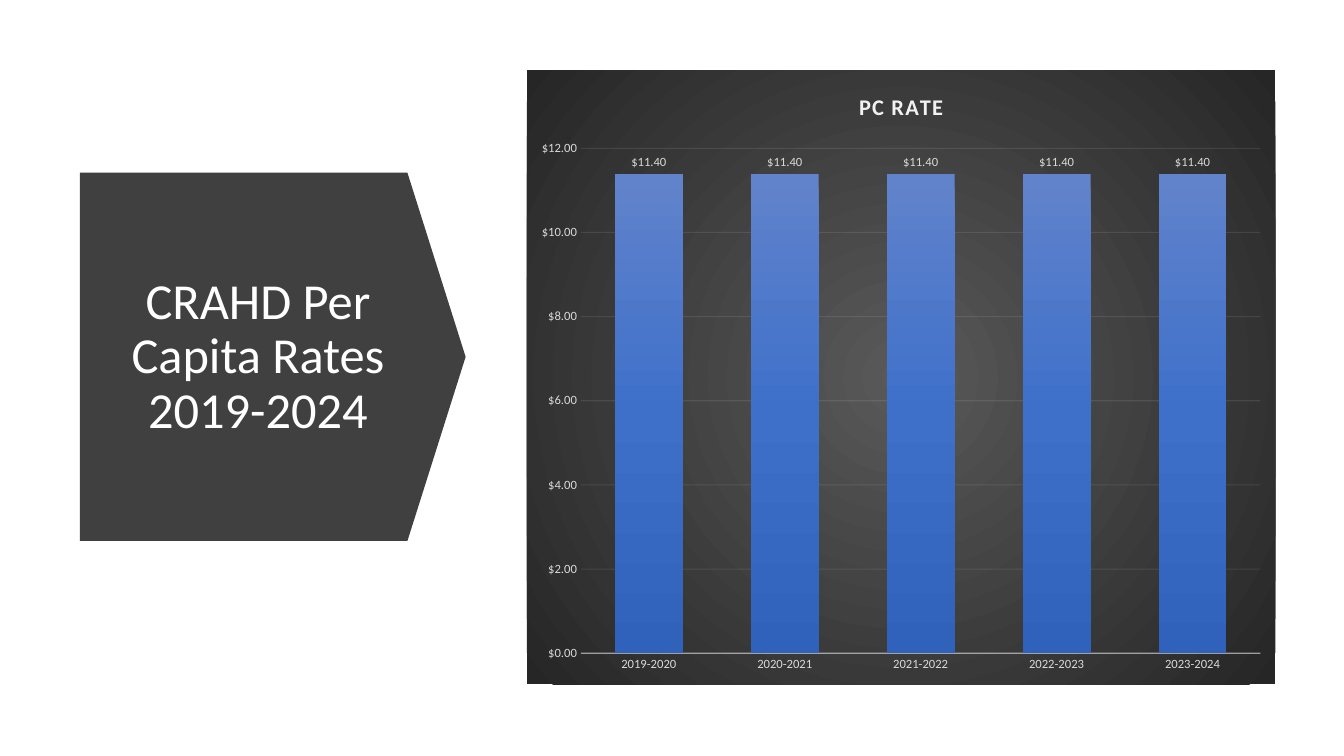
from lxml import etree
from pptx import Presentation, util as u
from pptx.chart.data import CategoryChartData
from pptx.dml.color import RGBColor
from pptx.enum import chart as ch, shapes, text
from pptx.oxml import parse_xml
from pptx.oxml.ns import nsdecls, qn

W, H = 13.33, 7.5
COLORS = {"white": "FFFFFF", "arrow": "404040", "label": "D9D9D9", "line": "F2F2F2",
          "glow": "595959", "edge": "262626",
          "bar_top": "6183CB", "bar_mid": "3E70CA", "bar_low": "3062BB"}
FONT = "Calibri"
MONEY = '"$"#,##0.00'
YEARS = [f"{y}-{y + 1}" for y in range(2019, 2024)]
RATES = [11.4] * len(YEARS)


def box(x, y, w, h):
    """Turn shares of the slide's size into lengths."""
    return u.Inches(x * W), u.Inches(y * H), u.Inches(w * W), u.Inches(h * H)


def style(font, size, color, bold=False):
    """Set the face, size, weight and colour of a font."""
    font.name, font.size, font.bold = FONT, u.Pt(size), bold
    font.color.rgb = RGBColor.from_string(COLORS[color])


def add_text(s, at, content, size=18, color="white", align=text.PP_ALIGN.CENTER,
             line_spacing=0.9, space_after=6):
    """Add a wrapped, vertically centred text box."""
    tf = s.shapes.add_textbox(*box(*at)).text_frame
    tf.word_wrap = True
    tf.vertical_anchor = text.MSO_ANCHOR.MIDDLE
    p = tf.paragraphs[0]
    p.alignment, p.line_spacing, p.space_after = align, line_spacing, u.Pt(space_after)
    r = p.add_run()
    r.text = content
    style(r.font, size, color)


def add_arrow(s, at):
    """Add the wide arrow that points right at the chart."""
    sp = s.shapes.add_shape(shapes.MSO_SHAPE.DOWN_ARROW, *box(*at))
    sp.rotation = 270
    sp.adjustments[0], sp.adjustments[1] = 1, 0.158
    sp.shadow.inherit = False
    sp.fill.solid()
    sp.fill.fore_color.rgb = RGBColor.from_string(COLORS["arrow"])
    sp.line.fill.background()


def gradient(stops, direction):
    """Build a gradient fill from (percent, colour) stops."""
    gs = "".join(f'<a:gs pos="{pos * 1000}"><a:srgbClr val="{COLORS[c]}"/></a:gs>'
                 for pos, c in stops)
    return parse_xml(f'<a:gradFill {nsdecls("a")} rotWithShape="1">'
                     f'<a:gsLst>{gs}</a:gsLst>{direction}</a:gradFill>')


def style_line(line, width, opacity):
    """Give a chart line its width and a translucent colour."""
    line.width = u.Pt(width)
    line.color.rgb = RGBColor.from_string(COLORS["line"])
    clr = line._get_or_add_ln().find(".//" + qn("a:srgbClr"))
    etree.SubElement(clr, qn("a:alpha")).set("val", str(opacity * 1000))


def style_axes(chart):
    """Format both axes and the gridlines."""
    cat, val = chart.category_axis, chart.value_axis
    for axis in (cat, val):
        axis.major_tick_mark = axis.minor_tick_mark = ch.XL_TICK_MARK.NONE
        style(axis.tick_labels.font, 9, "label")
    style_line(cat.format.line, 1, 54)
    val.minimum_scale, val.maximum_scale, val.major_unit = 0, 12, 2
    val.tick_labels.number_format = MONEY
    val.tick_labels.number_format_is_linked = False
    val.format.line.fill.background()
    val.has_major_gridlines = True
    style_line(val.major_gridlines.format.line, 0.75, 10)


def style_bars(plot):
    """Format the columns and their value labels."""
    plot.gap_width, plot.overlap, plot.vary_by_categories = 100, -24, False
    bars = plot.series[0]
    bars.format.fill.background()
    sp_pr = bars._element.spPr
    sp_pr.replace(sp_pr[0], gradient([(0, "bar_top"), (50, "bar_mid"), (100, "bar_low")],
                                     '<a:lin ang="5400000" scaled="0"/>'))
    labels = bars.data_labels
    labels.show_value = True
    labels.position = ch.XL_LABEL_POSITION.OUTSIDE_END
    labels.number_format, labels.number_format_is_linked = MONEY, False
    style(labels.font, 9, "label")


def add_rate_chart(s, at, title):
    """Add the column chart of rates on its dark radial background."""
    data = CategoryChartData(number_format=MONEY)
    data.categories = YEARS
    data.add_series(title, RATES)
    chart = s.shapes.add_chart(ch.XL_CHART_TYPE.COLUMN_CLUSTERED, *box(*at), data).chart
    chart.has_legend = False
    style(chart.font, 10, "label")
    chart.has_title = True
    chart.chart_title.include_in_layout = False
    r = chart.chart_title.text_frame.paragraphs[0].add_run()
    r.text = title
    style(r.font, 16, "line", bold=True)
    r._r.get_or_add_rPr().set("spc", "100")
    style_axes(chart)
    style_bars(chart.plots[0])
    sp_pr = parse_xml(f'<c:spPr {nsdecls("c", "a")}><a:ln><a:noFill/></a:ln></c:spPr>')
    sp_pr.insert(0, gradient([(0, "glow"), (100, "edge")],
                             '<a:path path="circle"><a:fillToRect l="50000" t="50000" '
                             'r="50000" b="50000"/></a:path>'))
    chart._chartSpace.chart.addnext(sp_pr)


def main():
    """Build the slide and save it."""
    prs = Presentation()
    prs.slide_width, prs.slide_height = u.Inches(W), u.Inches(H)
    s = prs.slides.add_slide(prs.slide_layouts[6])
    add_arrow(s, (0.066, 0.217, 0.274, 0.51))
    add_text(s, (0.084, 0.287, 0.216, 0.372), "CRAHD Per Capita Rates 2019-2024", size=36)
    add_rate_chart(s, (0.392, 0.093, 0.557, 0.812), "PC RATE")
    prs.save("out.pptx")


if __name__ == "__main__":
    main()
